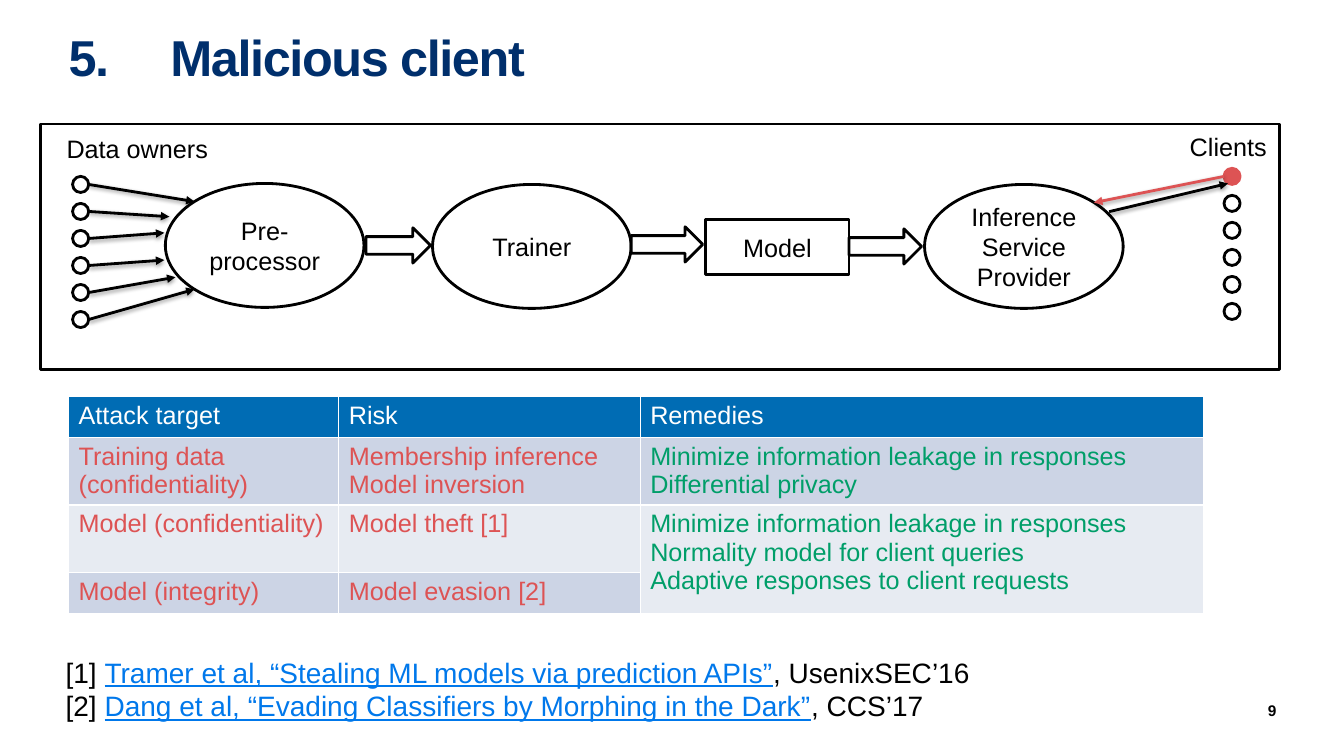
from lxml.etree import SubElement
from pptx import Presentation
from pptx.dml.color import RGBColor
from pptx.enum.shapes import MSO_CONNECTOR, MSO_SHAPE
from pptx.enum.text import MSO_ANCHOR, MSO_AUTO_SIZE, PP_ALIGN
from pptx.oxml.ns import qn
from pptx.util import Inches, Pt

BLACK = RGBColor(0x00, 0x00, 0x00)
WHITE = RGBColor(0xFF, 0xFF, 0xFF)
NAVY = RGBColor(0x00, 0x2F, 0x6C)
BLUE = RGBColor(0x00, 0x6C, 0xB4)
LINK = RGBColor(0x00, 0x78, 0xEB)
RED = RGBColor(0xDD, 0x53, 0x54)
GREEN = RGBColor(0x00, 0x9E, 0x69)
DARK_BAND = RGBColor(0xCC, 0xD4, 0xE5)
LIGHT_BAND = RGBColor(0xE7, 0xEB, 0xF2)

DOT = 0.16
DOT_PITCH = 0.268
OWNER_LEFT, OWNER_TOP = 0.72, 1.75
CLIENT_LEFT, CLIENT_TOP = 12.14, 1.67
OWNER_ARROW_TIPS = [(1.93, 2), (1.68, 2.15), (1.63, 2.31),
                    (1.63, 2.58), (1.74, 2.75), (1.93, 2.87)]
STAGES = [
    (MSO_SHAPE.OVAL, (1.64, 1.82, 1.97, 1.23), "Pre-processor"),
    (MSO_SHAPE.OVAL, (4.29, 1.83, 1.97, 1.23), "Trainer"),
    (MSO_SHAPE.RECTANGLE, (7, 2.18, 1.42, 0.54), "Model"),
    (MSO_SHAPE.OVAL, (9.17, 1.83, 1.97, 1.23), "Inference Service Provider"),
]
STAGE_ARROWS = [(3.63, 2.26, 0.64, 0.35), (6.26, 2.25, 0.71, 0.35),
                (8.42, 2.27, 0.72, 0.35)]
COLUMN_WIDTHS = [2.68, 2.99, 5.59]
ROW_HEIGHTS = [0.41, 0.67, 0.67, 0.41]
ATTACKS = [
    (["Attack target"], ["Risk"], ["Remedies"]),
    (["Training data (confidentiality)"],
     ["Membership inference", "Model inversion"],
     ["Minimize information leakage in responses", "Differential privacy"]),
    (["Model (confidentiality)"], ["Model theft [1]"],
     ["Minimize information leakage in responses",
      "Normality model for client queries",
      "Adaptive responses to client requests"]),
    (["Model (integrity)"], ["Model evasion [2]"], []),
]
ROW_FILLS = [BLUE, DARK_BAND, LIGHT_BAND, DARK_BAND]
COLUMN_COLOURS = [RED, RED, GREEN]
REFERENCES = [
    ("[1] ", "Tramer et al, “Stealing ML models via prediction APIs”", ", UsenixSEC’16"),
    ("[2] ", "Dang et al, “Evading Classifiers by Morphing in the Dark”", ", CCS’17"),
]


class AttackSlide:
    """Draws styled elements on one slide."""

    def __init__(self, slide, font="Arial", line_width=2):
        self.slide = slide
        self.font = font
        self.line_width = Pt(line_width)

    def run(self, paragraph, text, size=18, colour=BLACK, bold=False, underline=False):
        run = paragraph.add_run()
        run.text = text
        run.font.name = self.font
        run.font.size = Pt(size)
        run.font.bold = bold
        run.font.underline = underline
        run.font.color.rgb = colour
        return run

    def paragraphs(self, frame, lines):
        for index, line in enumerate(lines):
            paragraph = frame.paragraphs[0] if index == 0 else frame.add_paragraph()
            for text, style in line:
                self.run(paragraph, text, **style)

    def insets(self, frame, left=0, top=0, right=0, bottom=0):
        frame.margin_left, frame.margin_top = Inches(left), Inches(top)
        frame.margin_right, frame.margin_bottom = Inches(right), Inches(bottom)
        frame.word_wrap = True

    def title(self, box, text, tab_stops):
        title = self.slide.shapes.title
        title.left, title.top, title.width, title.height = map(Inches, box)
        frame = title.text_frame
        self.insets(frame)
        frame.auto_size = MSO_AUTO_SIZE.NONE
        frame.vertical_anchor = MSO_ANCHOR.TOP
        paragraph = frame.paragraphs[0]
        paragraph.alignment = PP_ALIGN.LEFT
        paragraph.line_spacing = 0.85
        stops = SubElement(paragraph._p.get_or_add_pPr(), qn("a:tabLst"))
        for stop in tab_stops:
            SubElement(stops, qn("a:tab"), pos=str(Inches(stop)), algn="l")
        run = self.run(paragraph, text, 36, NAVY, bold=True)
        run._r.get_or_add_rPr().set("spc", "-100")

    def text(self, box, lines):
        frame = self.slide.shapes.add_textbox(*map(Inches, box)).text_frame
        self.insets(frame)
        self.paragraphs(frame, lines)
        return frame

    def shape(self, kind, box, label="", fill=WHITE, line=BLACK):
        shape = self.slide.shapes.add_shape(kind, *map(Inches, box))
        shape.shadow.inherit = False
        shape.fill.solid()
        shape.fill.fore_color.rgb = fill
        shape.line.color.rgb = line
        shape.line.width = self.line_width
        if label:
            frame = shape.text_frame
            frame.vertical_anchor = MSO_ANCHOR.MIDDLE
            frame.paragraphs[0].alignment = PP_ALIGN.CENTER
            self.run(frame.paragraphs[0], label)

    def arrow(self, start, tip, colour=BLACK):
        arrow = self.slide.shapes.add_connector(
            MSO_CONNECTOR.STRAIGHT, *map(Inches, (*start, *tip)))
        arrow.line.color.rgb = colour
        arrow.line.width = self.line_width
        properties = arrow._element.spPr
        SubElement(properties.find(qn("a:ln")), qn("a:tailEnd"), type="triangle")
        effects = SubElement(properties, qn("a:effectLst"))
        shadow = SubElement(effects, qn("a:outerShdw"), blurRad=str(Pt(3.1)),
                            dist=str(Pt(1.6)), dir="5400000", rotWithShape="0")
        shade = SubElement(shadow, qn("a:srgbClr"), val=str(BLACK))
        SubElement(shade, qn("a:alpha"), val="38000")

    def table(self, left, top):
        table = self.slide.shapes.add_table(
            len(ROW_HEIGHTS), len(COLUMN_WIDTHS), Inches(left), Inches(top),
            Inches(sum(COLUMN_WIDTHS)), Inches(sum(ROW_HEIGHTS))).table
        for column, width in zip(table.columns, COLUMN_WIDTHS):
            column.width = Inches(width)
        for row, height in zip(table.rows, ROW_HEIGHTS):
            row.height = Inches(height)
        table.cell(2, 2).merge(table.cell(3, 2))
        for row, (entries, fill) in enumerate(zip(ATTACKS, ROW_FILLS)):
            for column, lines in enumerate(entries):
                cell = table.cell(row, column)
                cell.fill.solid()
                cell.fill.fore_color.rgb = fill
                colour = COLUMN_COLOURS[column] if row else WHITE
                self.paragraphs(cell.text_frame,
                                [[(line, {"colour": colour})] for line in lines])


def main():
    presentation = Presentation()
    presentation.slide_width = Inches(13.33)
    presentation.slide_height = Inches(7.5)
    page = AttackSlide(presentation.slides.add_slide(presentation.slide_layouts[5]))

    page.title((0.68, 0.35, 11.97, 0.8), "5.\t \tMalicious client", [0.5, 1.01])
    page.table(0.68, 3.93)

    page.shape(MSO_SHAPE.RECTANGLE, (0.4, 1.23, 12.29, 2.44))
    for index, tip in enumerate(OWNER_ARROW_TIPS):
        owner_top = OWNER_TOP + index * DOT_PITCH
        client_top = CLIENT_TOP + index * DOT_PITCH
        malicious = index == 0
        page.shape(MSO_SHAPE.OVAL, (OWNER_LEFT, owner_top, DOT, DOT))
        page.shape(MSO_SHAPE.OVAL, (CLIENT_LEFT, client_top, DOT, DOT),
                   fill=RED if malicious else WHITE, line=RED if malicious else BLACK)
        page.arrow((OWNER_LEFT + DOT, owner_top + DOT / 2), tip)
    for kind, box, label in STAGES:
        page.shape(kind, box, label)
    for box in STAGE_ARROWS:
        page.shape(MSO_SHAPE.RIGHT_ARROW, box)
    page.arrow((CLIENT_LEFT, CLIENT_TOP + DOT / 2), (10.85, 2.01), RED)
    page.arrow((11, 2.1), (12.18, 1.82))
    page.text((0.66, 1.32, 2.28, 0.3), [[("Data owners", {})]])
    page.text((11.8, 1.3, 0.98, 0.3), [[("Clients", {})]])

    plain = {"size": 20}
    linked = {"size": 20, "colour": LINK, "underline": True}
    page.text((0.65, 6.5, 9.29, 0.67),
              [[(number, plain), (paper, linked), (venue, plain)]
               for number, paper, venue in REFERENCES])
    page_number = page.text((11.79, 6.96, 0.87, 0.17),
                            [[("9", {"size": 11, "bold": True})]])
    page.insets(page_number, left=0.1, top=0.05, bottom=0.05)
    page_number.vertical_anchor = MSO_ANCHOR.MIDDLE
    page_number.paragraphs[0].alignment = PP_ALIGN.RIGHT

    presentation.save("out.pptx")


if __name__ == "__main__":
    main()
